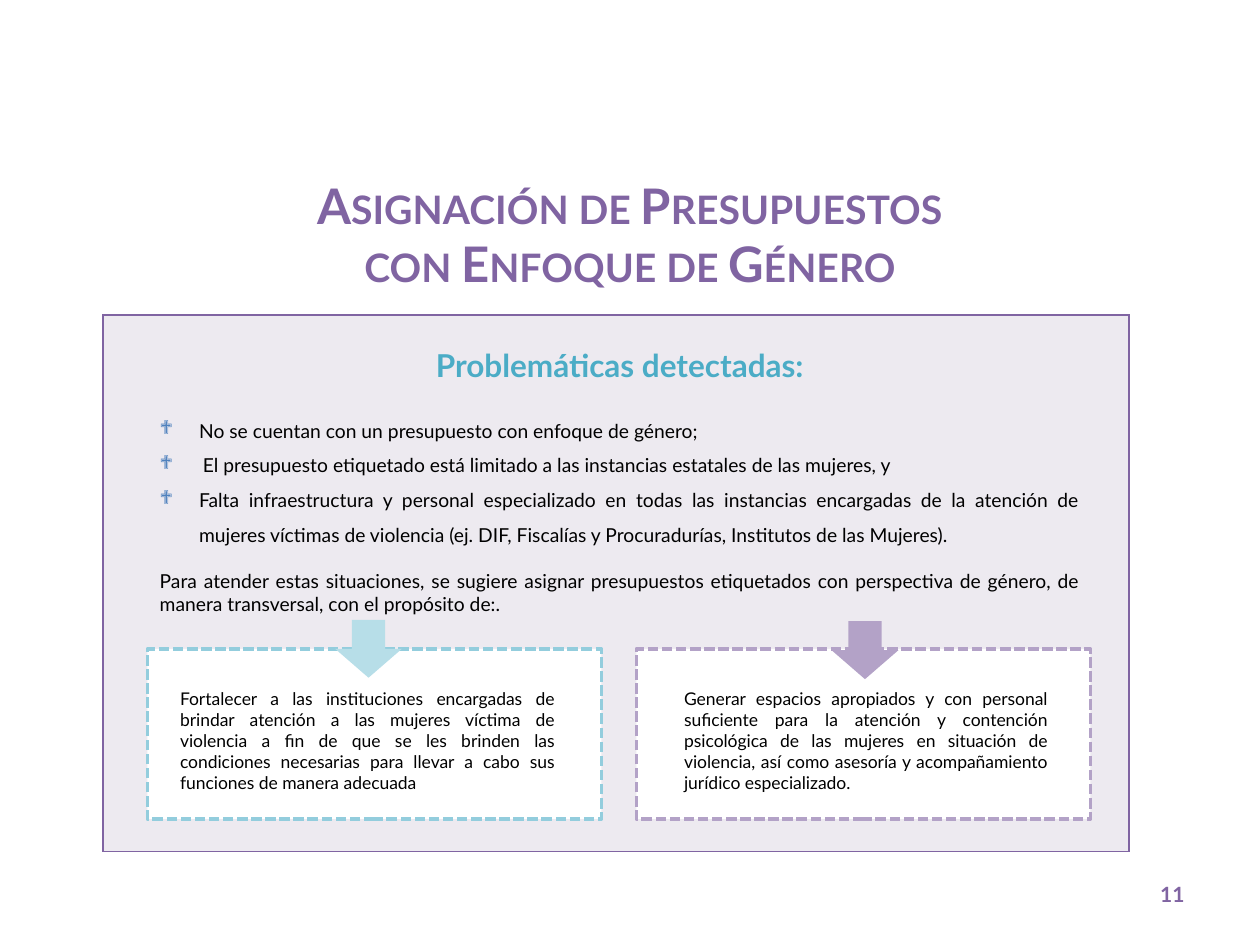
from dataclasses import dataclass
from typing import Optional

import pptx
import pptx.dml.color
import pptx.enum.dml
import pptx.enum.shapes
import pptx.enum.text
import pptx.oxml
import pptx.oxml.ns
import pptx.util

Pt = pptx.util.Pt
RGBColor = pptx.dml.color.RGBColor
Align = pptx.enum.text.PP_ALIGN
ShapeType = pptx.enum.shapes.MSO_SHAPE

PURPLE = RGBColor(0x80, 0x64, 0xA2)
LIGHT_PURPLE = RGBColor(0xB3, 0xA2, 0xC7)
PALE_PURPLE = RGBColor(0xED, 0xEA, 0xF0)
TEAL = RGBColor(0x4B, 0xAC, 0xC6)
LIGHT_TEAL = RGBColor(0x93, 0xCD, 0xDD)
PALE_TEAL = RGBColor(0xB7, 0xDE, 0xE8)
BLUE = RGBColor(0x4F, 0x81, 0xBD)
BLACK = RGBColor(0, 0, 0)
WHITE = RGBColor(0xFF, 0xFF, 0xFF)

FONT = "Lato"
BODY_SIZE = 11
BLANK_LINE = 13.2
BOX_TOP, BOX_WIDTH, BOX_HEIGHT = 370.8, 259.5, 97.2
ARROW_WIDTH, ARROW_HEIGHT = 38.2, 33.1


@dataclass
class Problem:
    text: str
    indent: float = 22.5


@dataclass
class Purpose:
    text: str
    box_left: float
    line_color: RGBColor
    arrow_left: float
    arrow_top: float
    arrow_color: RGBColor
    text_left: float
    text_width: float


PROBLEMS = [
    Problem("No se cuentan con un presupuesto con enfoque de género;"),
    Problem("El presupuesto etiquetado está limitado a las instancias estatales de las mujeres, y", 24.7),
    Problem("Falta infraestructura y personal especializado en todas las instancias encargadas de la "
            "atención de mujeres víctimas de violencia (ej. DIF, Fiscalías y Procuradurías, "
            "Institutos de las Mujeres)."),
]

PURPOSES = [
    Purpose("Fortalecer a las instituciones encargadas de brindar atención a las mujeres víctima de "
            "violencia a fin de que se les brinden las condiciones necesarias para llevar a cabo sus "
            "funciones de manera adecuada",
            84.2, LIGHT_TEAL, 191.5, 354.2, PALE_TEAL, 95.8, 228.2),
    Purpose("Generar espacios apropiados y con personal suficiente para la atención y contención "
            "psicológica de las mujeres en situación de violencia, así como asesoría y "
            "acompañamiento jurídico especializado.",
            363.6, LIGHT_PURPLE, 475.2, 355, LIGHT_PURPLE, 383.8, 221.8),
]


def add_text_frame(slide, left: float, top: float, width: float, height: float):
    text_frame = slide.shapes.add_textbox(Pt(left), Pt(top), Pt(width), Pt(height)).text_frame
    text_frame.word_wrap = True
    return text_frame


def add_bullet(paragraph, indent: float) -> None:
    properties = paragraph._p.get_or_add_pPr()
    properties.set("marL", str(Pt(indent)))
    properties.set("indent", str(-Pt(indent)))
    namespace = pptx.oxml.ns.nsdecls("a")
    for xml in (f'<a:buClr {namespace}><a:srgbClr val="{BLUE}"/></a:buClr>',
                f'<a:buFont {namespace} typeface="Wingdings"/>',
                f'<a:buChar {namespace} char="❖"/>'):
        properties.append(pptx.oxml.parse_xml(xml))


def write(text_frame, text: str, *, size: float = BODY_SIZE, color: RGBColor = BLACK,
          bold: bool = False, align: Align = Align.JUSTIFY, small_caps: bool = False,
          space_before: float = 0, line_spacing: Optional[float] = None,
          bullet_indent: Optional[float] = None) -> None:
    """Add one paragraph, using the first one while it is still empty."""
    first = text_frame.paragraphs[0]
    paragraph = text_frame.add_paragraph() if first.runs else first
    paragraph.alignment = align
    if space_before:
        paragraph.space_before = Pt(space_before)
    if line_spacing:
        paragraph.line_spacing = line_spacing
    if bullet_indent is not None:
        add_bullet(paragraph, bullet_indent)
    run = paragraph.add_run()
    run.text = text
    run.font.name = FONT
    run.font.size = Pt(size)
    run.font.bold = bold
    run.font.color.rgb = color
    if small_caps:
        run._r.get_or_add_rPr().set("cap", "small")


def add_panel(slide, left: float, top: float, width: float, height: float) -> None:
    """Add the one-cell table that frames the content."""
    table = slide.shapes.add_table(1, 1, Pt(left), Pt(top), Pt(width), Pt(height)).table
    table.first_row = False
    table.horz_banding = False
    cell = table.cell(0, 0)
    properties = cell._tc.get_or_add_tcPr()
    for side in ("lnL", "lnR", "lnT", "lnB"):
        properties.append(pptx.oxml.parse_xml(
            f'<a:{side} {pptx.oxml.ns.nsdecls("a")} w="{Pt(1)}"><a:solidFill>'
            f'<a:srgbClr val="{PURPLE}"/></a:solidFill></a:{side}>'))
    cell.fill.solid()
    cell.fill.fore_color.rgb = PALE_PURPLE


def add_shape(slide, kind: ShapeType, left: float, top: float, width: float, height: float,
              fill: RGBColor, line: Optional[RGBColor] = None) -> None:
    shape = slide.shapes.add_shape(kind, Pt(left), Pt(top), Pt(width), Pt(height))
    shape.shadow.inherit = False
    shape.fill.solid()
    shape.fill.fore_color.rgb = fill
    if line is None:
        shape.line.fill.background()
    else:
        shape.line.color.rgb = line
        shape.line.width = Pt(2)
        shape.line.dash_style = pptx.enum.dml.MSO_LINE.SQUARE_DOT


def main() -> None:
    presentation = pptx.Presentation()
    presentation.slide_width, presentation.slide_height = Pt(720), Pt(540)
    slide = presentation.slides.add_slide(presentation.slide_layouts[6])

    title = add_text_frame(slide, 0, 96.5, 720, 74.9)
    for line in ("Asignación de Presupuestos", "con Enfoque de Género"):
        write(title, line, size=28, color=PURPLE, bold=True, align=Align.CENTER, small_caps=True)

    add_panel(slide, 59, 180, 586.1, 306.7)

    body = add_text_frame(slide, 84.2, 194.4, 540, 162.7)
    write(body, "Problemáticas detectadas:", size=18, color=TEAL, bold=True, align=Align.CENTER)
    for index, problem in enumerate(PROBLEMS):
        write(body, problem.text, line_spacing=1.5, bullet_indent=problem.indent,
              space_before=0 if index else BLANK_LINE)
    write(body, "Para atender estas situaciones, se sugiere asignar presupuestos etiquetados con "
                "perspectiva de género, de manera transversal, con el propósito de:.",
          space_before=BLANK_LINE)

    for purpose in PURPOSES:
        add_shape(slide, ShapeType.RECTANGLE, purpose.box_left, BOX_TOP, BOX_WIDTH, BOX_HEIGHT,
                  WHITE, purpose.line_color)
        add_shape(slide, ShapeType.DOWN_ARROW, purpose.arrow_left, purpose.arrow_top,
                  ARROW_WIDTH, ARROW_HEIGHT, purpose.arrow_color)
        write(add_text_frame(slide, purpose.text_left, 389.5, purpose.text_width, 67.7),
              purpose.text, size=10)

    write(add_text_frame(slide, 516.2, 500.4, 167.8, 28.8), "11",
          size=12, color=PURPLE, bold=True, align=Align.RIGHT)

    presentation.save("out.pptx")


if __name__ == "__main__":
    main()
